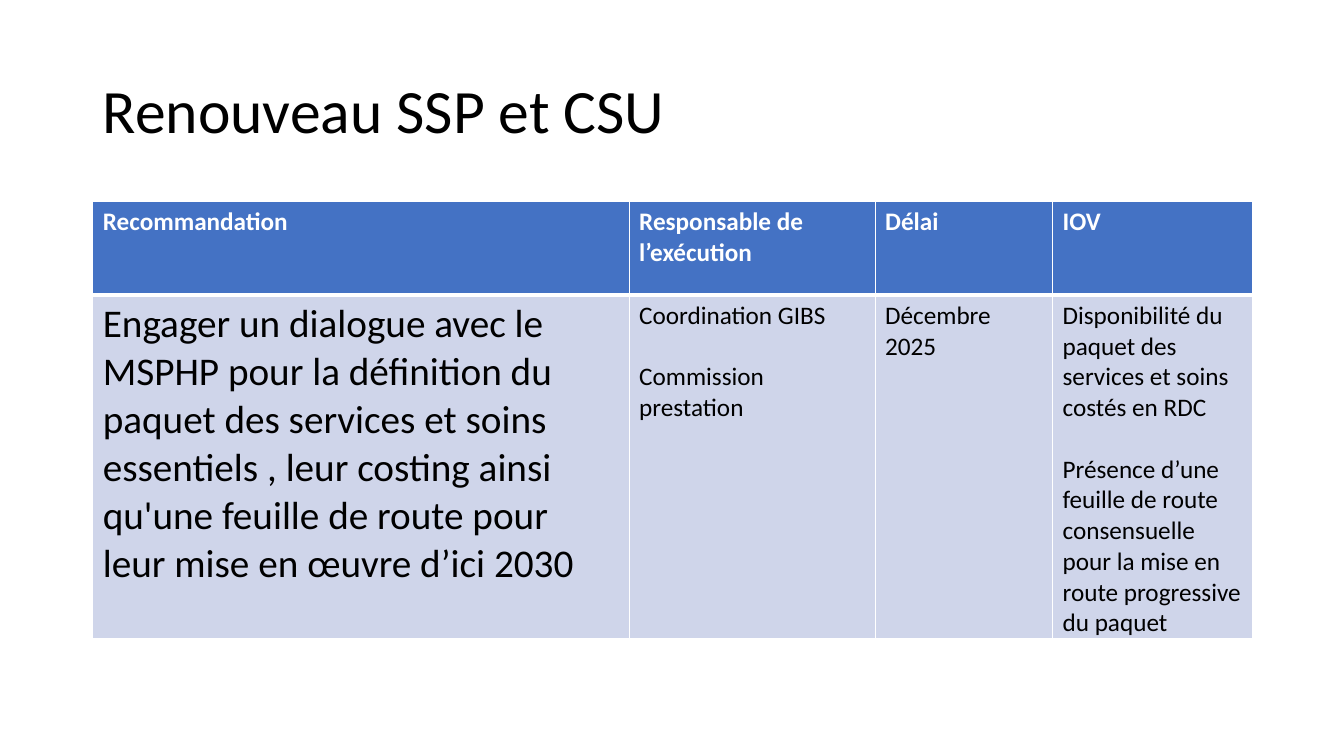
"""Build the slide of advice on SSP and CSU."""
from dataclasses import dataclass

from lxml.etree import SubElement as Sub
from pptx import Presentation as Deck
from pptx.dml.color import RGBColor as Rgb
from pptx.enum.text import MSO_ANCHOR as Anchor
from pptx.oxml.ns import qn
from pptx.util import Emu, Pt

SCALE = 9144


@dataclass(frozen=True)
class Theme:
    font: str = "Calibri"
    ink: str = "000000"
    white: str = "FFFFFF"
    head: str = "4472C4"
    body: str = "CFD5EA"
    title: int = 44
    large: int = 28
    small: int = 18
    gap: int = 22
    thin: int = 1
    thick: int = 3


THEME = Theme()
WIDTHS = (532, 244, 176, 198)
HEIGHTS = (93, 340)
HEADS = ("Recommandation", "Responsable de l’exécution", "Délai", "IOV")
ADVICE = (
    ("Engager un dialogue avec le MSPHP pour la définition du paquet des "
     "services et soins essentiels , leur costing ainsi qu'une feuille de "
     "route pour leur mise en œuvre d’ici 2030",),
    ("Coordination GIBS", "Commission prestation"),
    ("Décembre 2025",),
    ("Disponibilité du paquet des services et soins costés en RDC",
     "Présence d’une feuille de route consensuelle pour la mise en route "
     "progressive du paquet"),
)


def px(size):
    return Emu(size * SCALE)


def write(frame, *parts, size=THEME.small, color=THEME.ink, bold=False,
          gap=0, line=1.0):
    frame.word_wrap = True
    for i, part in enumerate(parts):
        para = frame.add_paragraph() if i else frame.paragraphs[0]
        para.line_spacing = line
        para.space_before = Pt(gap if i else 0)
        run = para.add_run()
        run.text = part
        font = run.font
        font.name, font.size, font.bold = THEME.font, Pt(size), bold
        font.color.rgb = Rgb.from_string(color)


def add_title(slide, text):
    box = slide.shapes.add_textbox(px(92), px(40), px(1150), px(145))
    box.text_frame.vertical_anchor = Anchor.MIDDLE
    write(box.text_frame, text, size=THEME.title, line=0.9)


def edge(cell, **sides):
    props = cell._tc.get_or_add_tcPr()
    for side, width in sides.items():
        line = Sub(props, qn(f"a:ln{side}"), w=str(Pt(width)))
        fill = Sub(line, qn("a:solidFill"))
        Sub(fill, qn("a:srgbClr"), val=THEME.white)


def paint(cell, color, top, base):
    edge(cell, L=THEME.thin, R=THEME.thin, T=top, B=base)
    cell.fill.solid()
    cell.fill.fore_color.rgb = Rgb.from_string(color)


def add_grid(slide):
    shape = slide.shapes.add_table(len(HEIGHTS), len(WIDTHS), px(92), px(200),
                                   px(sum(WIDTHS)), px(sum(HEIGHTS)))
    grid = shape.table
    grid.horz_banding = False
    for row, height in zip(grid.rows, HEIGHTS):
        row.height = px(height)
    for i, width in enumerate(WIDTHS):
        grid.columns[i].width = px(width)
        head, body = grid.cell(0, i), grid.cell(1, i)
        paint(head, THEME.head, THEME.thin, THEME.thick)
        paint(body, THEME.body, THEME.thick, THEME.thin)
        write(head.text_frame, HEADS[i], color=THEME.white, bold=True)
        write(body.text_frame, *ADVICE[i], gap=THEME.gap,
              size=THEME.small if i else THEME.large)


def main():
    deck = Deck()
    deck.slide_width, deck.slide_height = px(1333), px(750)
    slide = deck.slides.add_slide(deck.slide_layouts[6])
    add_title(slide, "Renouveau SSP et CSU")
    add_grid(slide)
    deck.save("out.pptx")


if __name__ == "__main__":
    main()
